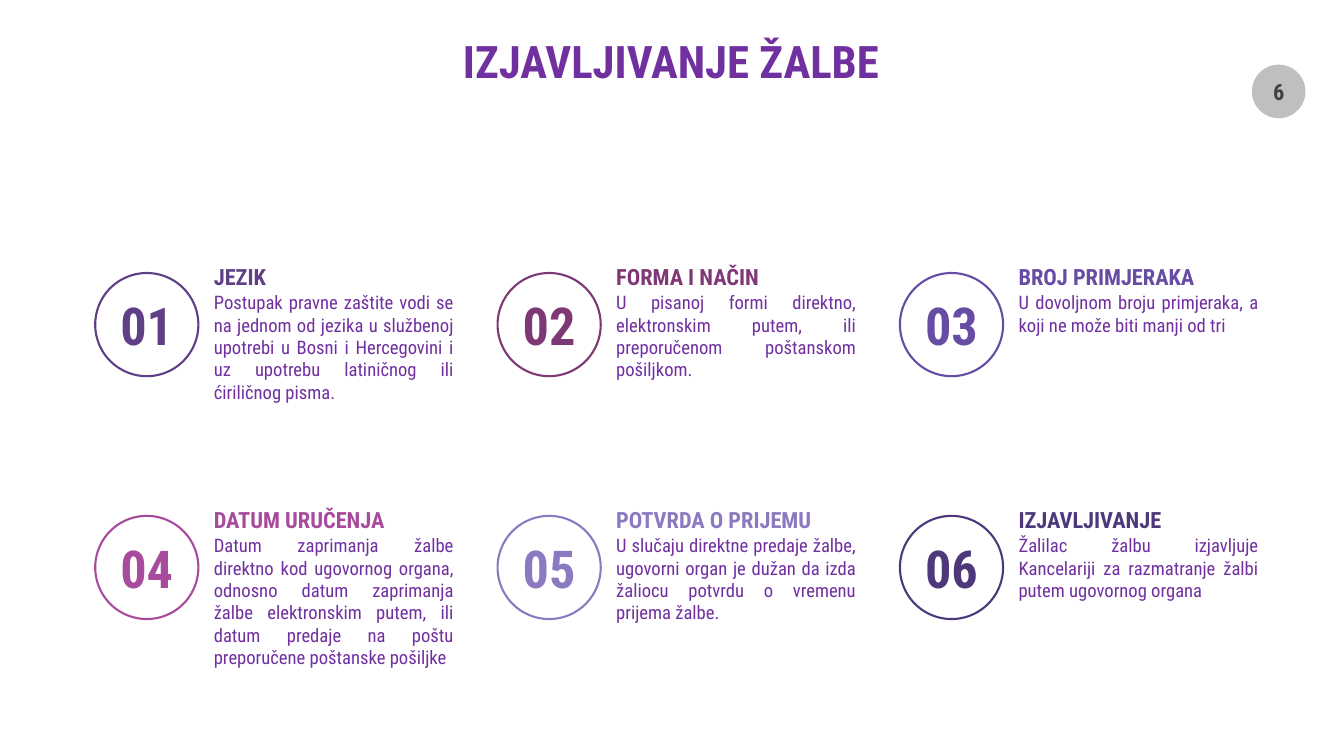
from dataclasses import dataclass

from pptx import Presentation
from pptx.dml.color import RGBColor
from pptx.enum.shapes import MSO_SHAPE
from pptx.enum.text import MSO_ANCHOR, MSO_AUTO_SIZE, PP_ALIGN
from pptx.util import Cm, Pt


@dataclass(frozen=True)
class Theme:
    font: str = "Roboto Condensed"
    purple: str = "7030A0"
    badge: str = "BFBFBF"
    badge_text: str = "404040"
    title: float = 32
    number: float = 37.3
    heading: float = 16
    body: float = 13.3
    outline: float = 1.5


def write(tf, text, size, color, font, bold=False, align=PP_ALIGN.LEFT,
          anchor=MSO_ANCHOR.TOP, wrap=True, margins=(0.25, 0.13)):
    tf.auto_size = MSO_AUTO_SIZE.NONE
    tf.word_wrap = wrap
    tf.vertical_anchor = anchor
    tf.margin_left = tf.margin_right = Cm(margins[0])
    tf.margin_top = tf.margin_bottom = Cm(margins[1])
    p = tf.paragraphs[0]
    p.alignment = align
    p.space_before = Pt(0)
    r = p.add_run()
    r.text = text
    r.font.name = font
    r.font.size = Pt(size)
    r.font.bold = bold
    r.font.color.rgb = RGBColor.from_string(color)


class Deck:
    def __init__(self, theme):
        self.theme = theme
        self.prs = Presentation()
        self.prs.slide_width, self.prs.slide_height = Cm(33.87), Cm(19.05)
        self.s = self.prs.slides.add_slide(self.prs.slide_layouts[5])

    def title(self, text, x, y, w, h):
        sp = self.s.shapes.title
        sp.left, sp.top, sp.width, sp.height = Cm(x), Cm(y), Cm(w), Cm(h)
        write(sp.text_frame, text, self.theme.title, self.theme.purple,
              self.theme.font, bold=True, align=PP_ALIGN.CENTER,
              anchor=MSO_ANCHOR.MIDDLE, margins=(0, 0))

    def text(self, text, x, y, w, h, size, color, **fmt):
        sp = self.s.shapes.add_textbox(Cm(x), Cm(y), Cm(w), Cm(h))
        write(sp.text_frame, text, size, color, self.theme.font, **fmt)

    def circle(self, text, x, y, d, size, color, fill=None, line=None):
        sp = self.s.shapes.add_shape(MSO_SHAPE.OVAL, Cm(x), Cm(y), Cm(d), Cm(d))
        sp.shadow.inherit = False
        if fill:
            sp.fill.solid()
            sp.fill.fore_color.rgb = RGBColor.from_string(fill)
        else:
            sp.fill.background()
        if line:
            sp.line.color.rgb = RGBColor.from_string(line)
            sp.line.width = Pt(self.theme.outline)
        else:
            sp.line.fill.background()
        write(sp.text_frame, text, size, color, self.theme.font, bold=True,
              align=PP_ALIGN.CENTER, anchor=MSO_ANCHOR.MIDDLE, wrap=False,
              margins=(0.33, 0.18))

    def item(self, number, heading, body, color, x, y):
        t = self.theme
        text_x, text_w = x + 2.74, 6.55
        self.text(body, text_x, y + 0.33, text_w, 3.1, t.body, t.purple,
                  align=PP_ALIGN.JUSTIFY)
        self.text(heading, text_x, y - 0.38, text_w, 0.94, t.heading, color,
                  bold=True)
        self.circle(f"{number:02}", x, y, 2.6, t.number, color, line=color)


ITEMS = [
    ("JEZIK", "5F3F85",
     "Postupak pravne zaštite vodi se na jednom od jezika u službenoj upotrebi "
     "u Bosni i Hercegovini i uz upotrebu latiničnog ili ćiriličnog pisma."),
    ("FORMA I NAČIN", "7E3875",
     "U pisanoj formi direktno, elektronskim putem, ili preporučenom "
     "poštanskom pošiljkom."),
    ("BROJ PRIMJERAKA", "664CA3",
     "U dovoljnom broju primjeraka, a koji ne može biti manji od tri"),
    ("DATUM URUČENJA", "A84B9C",
     "Datum zaprimanja žalbe direktno kod ugovornog organa, odnosno datum "
     "zaprimanja žalbe elektronskim putem, ili datum predaje na poštu "
     "preporučene poštanske pošiljke"),
    ("POTVRDA O PRIJEMU", "8B7AC0",
     "U slučaju direktne predaje žalbe, ugovorni organ je dužan da izda "
     "žaliocu potvrdu o vremenu prijema žalbe."),
    ("IZJAVLJIVANJE", "4C387A",
     "Žalilac žalbu izjavljuje Kancelariji za razmatranje žalbi putem "
     "ugovornog organa"),
]
COLUMNS = 3
LEFT, TOP = 2.4, 6.88
STEP_X, STEP_Y = 10.14, 6.12


def main():
    theme = Theme()
    deck = Deck(theme)

    # Title and page number
    deck.title("IZJAVLJIVANJE ŽALBE", 8.1, 0.74, 17.63, 1.55)
    deck.circle("6", 31.55, 1.63, 1.35, theme.heading, theme.badge_text,
                fill=theme.badge)

    # Numbered items in a grid
    for i, (heading, color, body) in enumerate(ITEMS):
        row, col = divmod(i, COLUMNS)
        deck.item(i + 1, heading, body, color,
                  LEFT + col * STEP_X, TOP + row * STEP_Y)

    deck.prs.save("out.pptx")


if __name__ == "__main__":
    main()
